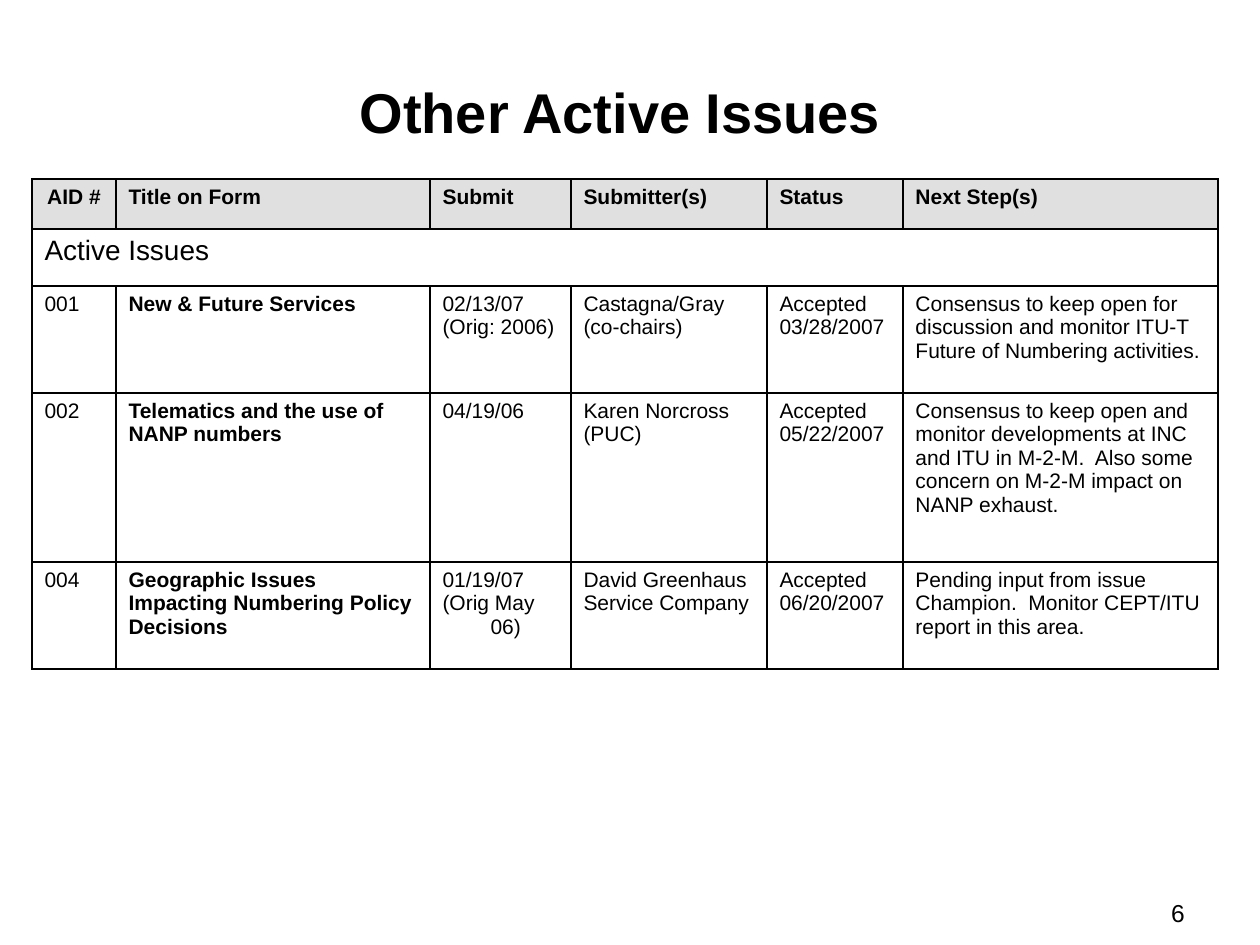
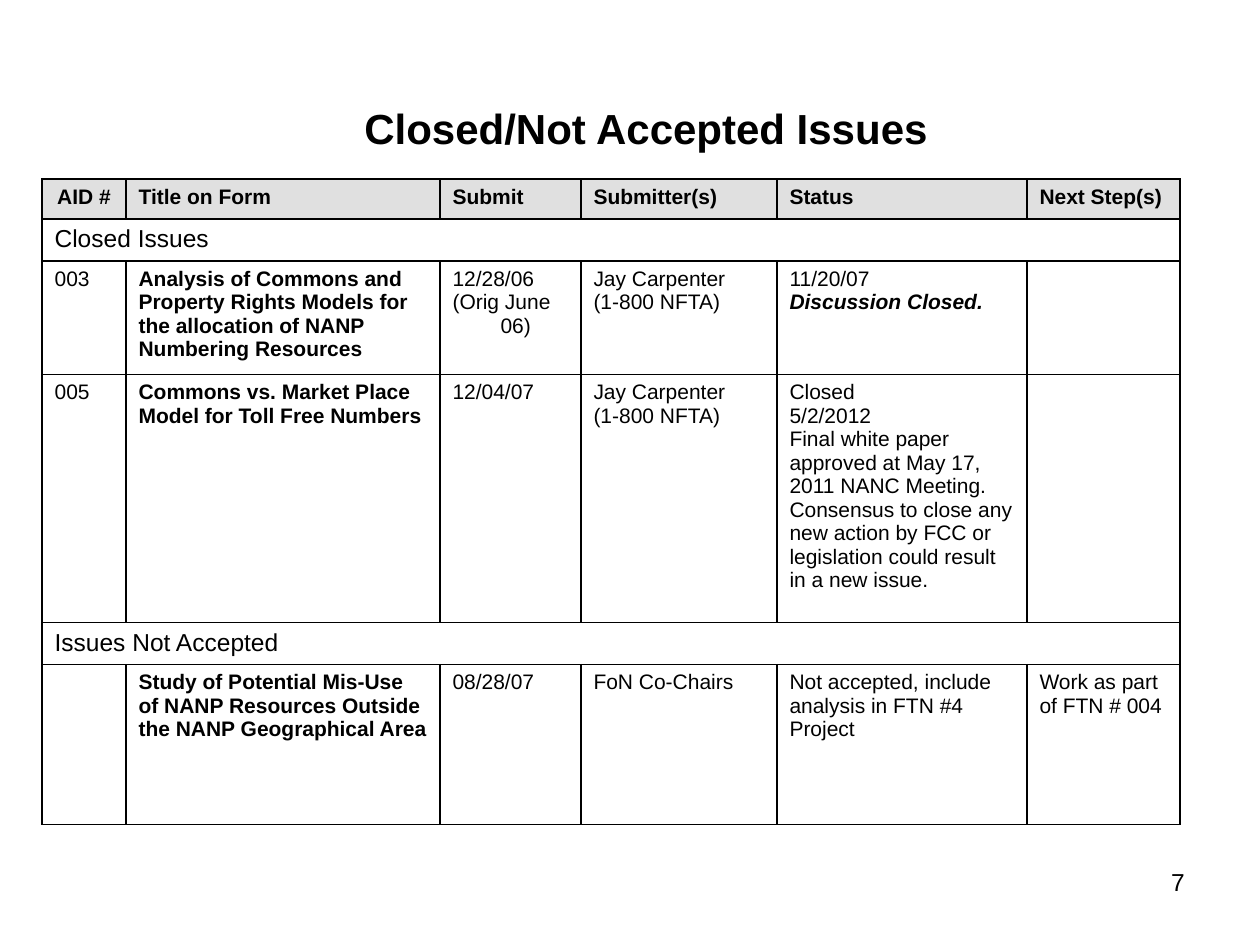
"""Build two slides that tabulate active, closed and not accepted issues."""
import dataclasses

import lxml.etree
import pptx
import pptx.dml.color
import pptx.enum.text
import pptx.oxml.ns
import pptx.util

EMU_PER_PX = 914400 / 126
FONT = "Arial"
COLORS = {"text": "000000", "border": "000000", "header": "E0E0E0"}
ALIGN = pptx.enum.text.PP_ALIGN
ANCHOR = pptx.enum.text.MSO_ANCHOR
HEADINGS = ("AID #", "Title on Form", "Submit", "Submitter(s)", "Status", "Next Step(s)")
SHARED_COLUMNS = (84, 314, 141, 196)
TITLE_COLUMN = 1
HANGING_COLUMNS = (0, 2, 3)
HANG = 48
BODY_SIZE = 12


@dataclasses.dataclass(frozen=True)
class Label:
    """Text box with its place in px and its type style."""

    text: str
    left: int
    top: int
    width: int
    height: int
    size: int
    bold: bool = False
    align: ALIGN = ALIGN.CENTER
    anchor: ANCHOR = ANCHOR.MIDDLE
    tail_size: int = 0


@dataclasses.dataclass(frozen=True)
class Row:
    """Table row; a single cell makes a section heading across the table."""

    height: int
    cells: tuple[str, ...]


@dataclasses.dataclass(frozen=True)
class IssueTable:
    """Issue table with its place, last two column widths and rows."""

    left: int
    last_columns: tuple[int, int]
    section_size: int
    rows: tuple[Row, ...]


@dataclasses.dataclass(frozen=True)
class IssuePage:
    """Title, table and page number of one slide."""

    title: Label
    table: IssueTable
    number: Label


def px(length: int) -> int:
    """Turn px into EMU."""
    return pptx.util.Emu(round(length * EMU_PER_PX))


def rgb(name: str) -> pptx.dml.color.RGBColor:
    """Look up a named colour."""
    return pptx.dml.color.RGBColor.from_string(COLORS[name])


def page_number(text: str, top: int, height: int) -> Label:
    """Describe a page number at the lower right."""
    return Label(text, 903, top, 294, height, 14, align=ALIGN.RIGHT, anchor=ANCHOR.TOP)


def style_span(span, size: int, bold: bool = False, italic: bool = False) -> None:
    """Format one run."""
    span.font.name = FONT
    span.font.size = pptx.util.Pt(size)
    span.font.bold = bold
    span.font.italic = italic
    span.font.color.rgb = rgb("text")


def draw_label(page, label: Label) -> None:
    """Draw a text box of one paragraph."""
    box = page.shapes.add_textbox(px(label.left), px(label.top), px(label.width), px(label.height))
    frame = box.text_frame
    frame.word_wrap = True
    frame.vertical_anchor = label.anchor
    frame.text = label.text
    para = frame.paragraphs[0]
    para.alignment = label.align
    style_span(para.runs[0], label.size, label.bold)
    if label.tail_size:
        tail = para.add_run()
        tail.text = " "
        style_span(tail, label.tail_size, label.bold)


def hang_lines(para) -> None:
    """Indent every line of a paragraph after its first."""
    properties = para._p.get_or_add_pPr()
    properties.set("marL", str(px(HANG)))
    properties.set("indent", str(-px(HANG)))


def draw_borders(cell) -> None:
    """Put a thin line on all four sides of a cell."""
    properties = cell._tc.get_or_add_tcPr()
    for index, side in enumerate(("lnL", "lnR", "lnT", "lnB")):
        line = lxml.etree.Element(pptx.oxml.ns.qn(f"a:{side}"), w=str(pptx.util.Pt(1)))
        fill = lxml.etree.SubElement(line, pptx.oxml.ns.qn("a:solidFill"))
        lxml.etree.SubElement(fill, pptx.oxml.ns.qn("a:srgbClr"), val=COLORS["border"])
        properties.insert(index, line)


def fill_cell(cell, text: str, size: int, bold: bool, hanging: bool) -> None:
    """Write and format the text of a cell."""
    cell.text_frame.text = text
    for para in cell.text_frame.paragraphs:
        if hanging:
            hang_lines(para)
        for span in para.runs:
            closing = span.text == "Discussion Closed."
            style_span(span, size, bold or closing, closing)


def draw_table(page, spec_table: IssueTable) -> None:
    """Draw an issue table under its heading row."""
    widths = SHARED_COLUMNS + spec_table.last_columns
    rows = spec_table.rows
    frame = page.shapes.add_table(
        len(rows), len(widths), px(spec_table.left), px(179),
        px(sum(widths)), px(sum(row.height for row in rows)),
    )
    table = frame.table
    table.first_row = table.horz_banding = False
    for column, width in zip(table.columns, widths):
        column.width = px(width)
    for row_index, row in enumerate(rows):
        table.rows[row_index].height = px(row.height)
        is_header = row_index == 0
        is_section = len(row.cells) == 1
        for index in range(len(widths)):
            cell = table.cell(row_index, index)
            draw_borders(cell)
            if is_header:
                cell.fill.solid()
                cell.fill.fore_color.rgb = rgb("header")
            else:
                cell.fill.background()
        if is_section:
            table.cell(row_index, 0).merge(table.cell(row_index, len(widths) - 1))
        for index, text in enumerate(row.cells):
            fill_cell(
                table.cell(row_index, index), text,
                spec_table.section_size if is_section else BODY_SIZE,
                is_header or index == TITLE_COLUMN,
                is_header or index in HANGING_COLUMNS,
            )
    table.cell(0, 0).text_frame.paragraphs[0].alignment = ALIGN.CENTER


ACTIVE = IssuePage(
    Label("Other Active Issues", 63, 53, 1134, 105, 32, bold=True, tail_size=40),
    IssueTable(32, (136, 315), 16, (
        Row(50, HEADINGS),
        Row(57, ("Active Issues",)),
        Row(107, (
            "001", "New & Future Services", "02/13/07\n(Orig: 2006)",
            "Castagna/Gray\n(co-chairs)", "Accepted\n03/28/2007",
            "Consensus to keep open for discussion and monitor ITU-T Future of "
            "Numbering activities.",
        )),
        Row(169, (
            "002", "Telematics and the use of NANP numbers", "04/19/06",
            "Karen Norcross\n(PUC)", "Accepted\n05/22/2007",
            "Consensus to keep open and monitor developments at INC and ITU in "
            "M-2-M.  Also some concern on M-2-M impact on NANP exhaust.",
        )),
        Row(107, (
            "004", "Geographic Issues Impacting Numbering Policy Decisions",
            "01/19/07\n(Orig May 06)", "David Greenhaus\nService Company",
            "Accepted\n06/20/2007",
            "Pending input from issue Champion.  Monitor CEPT/ITU report in this area.",
        )),
    )),
    page_number("6", 892, 34),
)

CLOSED = IssuePage(
    Label("Closed/Not Accepted Issues", 63, 84, 1166, 88, 24, bold=True),
    IssueTable(42, (250, 153), 14, (
        Row(40, HEADINGS),
        Row(41, ("Closed Issues",)),
        Row(113, (
            "003",
            "Analysis of Commons and Property Rights Models for the allocation of "
            "NANP Numbering Resources",
            "12/28/06\n(Orig June 06)", "Jay Carpenter\n(1-800 NFTA)",
            "11/20/07\nDiscussion Closed.", "",
        )),
        Row(248, (
            "005", "Commons vs. Market Place Model for Toll Free Numbers", "12/04/07",
            "Jay Carpenter\n(1-800 NFTA)",
            "Closed\n5/2/2012\nFinal white paper approved at May 17, 2011 NANC Meeting. "
            "Consensus to close any new action by FCC or legislation could result in a "
            "new issue.", "",
        )),
        Row(41, ("Issues Not Accepted",)),
        Row(160, (
            "",
            "Study of Potential Mis-Use of NANP Resources Outside the NANP "
            "Geographical Area",
            "08/28/07", "FoN Co-Chairs",
            "Not accepted, include analysis in FTN #4 Project",
            "Work as part of FTN # 004",
        )),
    )),
    page_number("7", 861, 65),
)


def main() -> None:
    """Build and save the deck."""
    deck = pptx.Presentation()
    deck.slide_width, deck.slide_height = px(1260), px(945)
    for issue_page in (ACTIVE, CLOSED):
        page = deck.slides.add_slide(deck.slide_layouts[6])
        draw_label(page, issue_page.title)
        draw_table(page, issue_page.table)
        draw_label(page, issue_page.number)
    deck.save("out.pptx")


if __name__ == "__main__":
    main()
